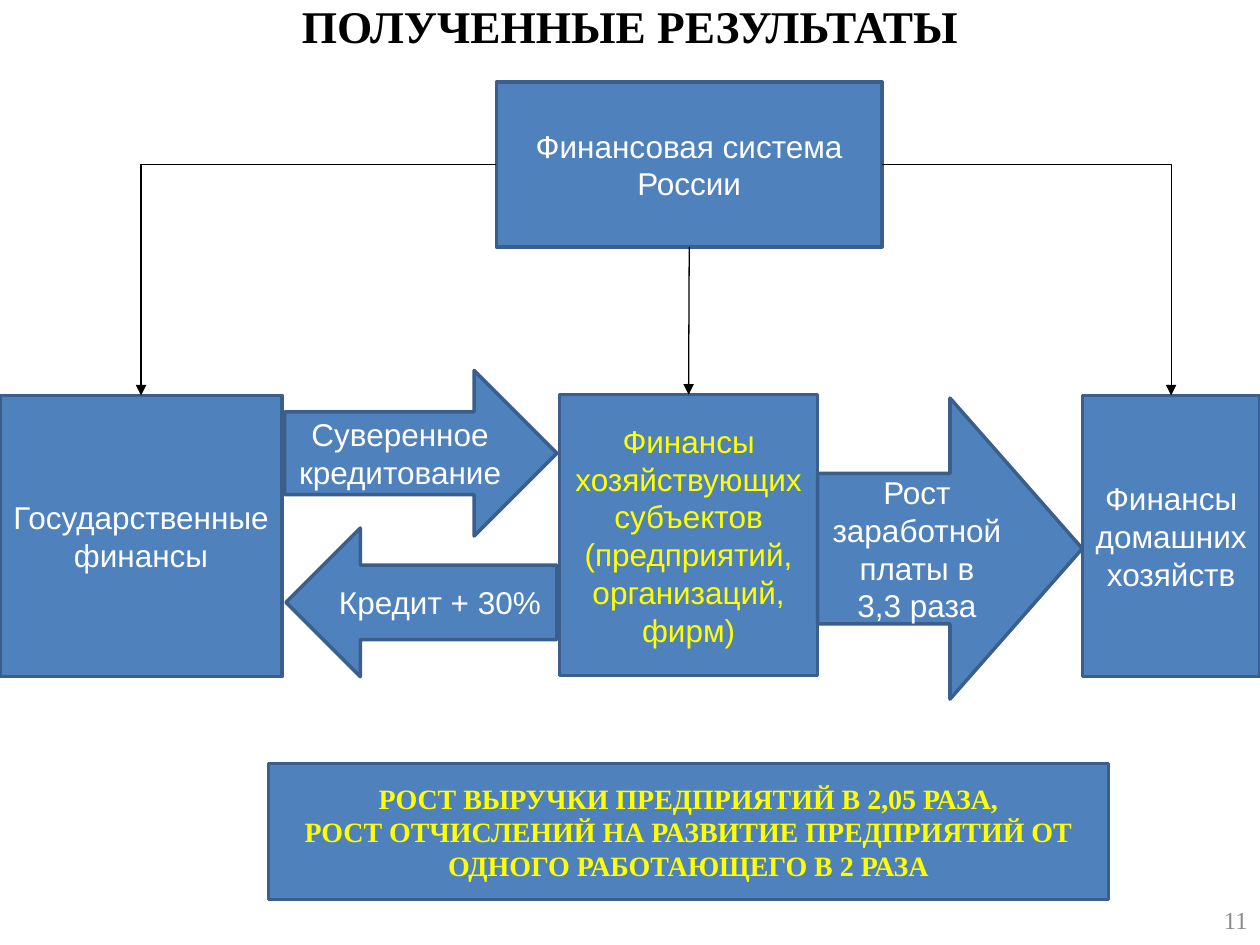
from pptx import Presentation
from pptx.dml.color import RGBColor
from pptx.enum import shapes, text
from pptx.oxml.ns import qn
from pptx.util import Pt
from lxml import etree

BLACK = RGBColor(0x00, 0x00, 0x00)
WHITE = RGBColor(0xFF, 0xFF, 0xFF)
YELLOW = RGBColor(0xFF, 0xFF, 0x00)
GRAY = RGBColor(0x8B, 0x8B, 0x8B)
BLUE = RGBColor(0x4F, 0x81, 0xBD)
DARK_BLUE = RGBColor(0x3A, 0x5F, 0x8C)

SERIF = "Times New Roman"
RECT = shapes.MSO_SHAPE.RECTANGLE
RIGHT = shapes.MSO_SHAPE.RIGHT_ARROW
LEFT = shapes.MSO_SHAPE.LEFT_ARROW
ELBOW = shapes.MSO_CONNECTOR.ELBOW
STRAIGHT = shapes.MSO_CONNECTOR.STRAIGHT
SITE_TOP, SITE_LEFT, SITE_BOTTOM, SITE_RIGHT = range(4)


def write(sp, *paragraphs, size=18, font="Arial", color=WHITE, bold=False,
          align=text.PP_ALIGN.CENTER, spacing=None):
    tf = sp.text_frame
    tf.word_wrap = True
    tf.vertical_anchor = text.MSO_ANCHOR.MIDDLE
    for i, content in enumerate(paragraphs):
        p = tf.add_paragraph() if i else tf.paragraphs[0]
        p.text = content
        p.alignment = align
        if spacing:
            p.line_spacing = spacing
        for r in p.runs:
            r.font.size = Pt(size)
            r.font.name = font
            r.font.bold = bold
            r.font.color.rgb = color


def add_label(s, box, content, **fmt):
    sp = s.shapes.add_textbox(*map(Pt, box))
    write(sp, content, font=SERIF, **fmt)


def add_block(s, kind, box, *paragraphs, **fmt):
    sp = s.shapes.add_shape(kind, *map(Pt, box))
    sp.shadow.inherit = False
    sp.fill.solid()
    sp.fill.fore_color.rgb = BLUE
    sp.line.color.rgb = DARK_BLUE
    sp.line.width = Pt(2)
    write(sp, *paragraphs, **fmt)
    return sp


def add_link(s, kind, source, site, target):
    cxn = s.shapes.add_connector(kind, 0, 0, 0, 0)
    cxn.begin_connect(source, site)
    cxn.end_connect(target, SITE_TOP)
    cxn.line.color.rgb = BLACK
    cxn.line.width = Pt(0.75)
    sp_pr = cxn._element.spPr
    if kind == ELBOW:
        sp_pr.find(qn("a:prstGeom")).set("prst", "bentConnector2")
    etree.SubElement(sp_pr.find(qn("a:ln")), qn("a:tailEnd"), type="triangle")
    etree.SubElement(sp_pr, qn("a:effectLst"))


def main():
    prs = Presentation()
    prs.slide_width, prs.slide_height = Pt(720), Pt(540)
    s = prs.slides.add_slide(prs.slide_layouts[6])

    add_label(s, (0, 0, 720, 34.6), "ПОЛУЧЕННЫЕ РЕЗУЛЬТАТЫ",
              size=25.9, color=BLACK, bold=True, spacing=0.8)
    add_label(s, (684.7, 511.2, 35.3, 28.8), "11",
              size=14, color=GRAY, align=text.PP_ALIGN.RIGHT)

    system = add_block(s, RECT, (283.7, 46.8, 220.3, 94.3), "Финансовая система России")
    state = add_block(s, RECT, (0, 226, 161.3, 160.6), "Государственные финансы")
    firms = add_block(s, RECT, (319.7, 225.5, 147.6, 160.6),
                      "Финансы хозяйствующих субъектов (предприятий, организаций, фирм)",
                      color=YELLOW)
    homes = add_block(s, RECT, (618.5, 226, 101.5, 160.6), "Финансы домашних хозяйств")

    add_link(s, ELBOW, system, SITE_LEFT, state)
    add_link(s, ELBOW, system, SITE_RIGHT, homes)
    add_link(s, STRAIGHT, system, SITE_BOTTOM, firms)

    add_block(s, RIGHT, (162.7, 211.7, 155.5, 94.6), "Суверенное кредитование")
    add_block(s, LEFT, (163.4, 301.7, 154.8, 85), "Кредит + 30%")
    add_block(s, RIGHT, (467.3, 227.5, 151.2, 172), "Рост заработной платы в\v3,3 раза")
    add_block(s, RECT, (153.4, 436.3, 480.2, 77.8),
              "РОСТ ВЫРУЧКИ ПРЕДПРИЯТИЙ В 2,05 РАЗА,",
              "РОСТ ОТЧИСЛЕНИЙ НА РАЗВИТИЕ ПРЕДПРИЯТИЙ ОТ ОДНОГО РАБОТАЮЩЕГО В 2 РАЗА",
              size=16, font=SERIF, color=YELLOW, bold=True)

    prs.save("out.pptx")


if __name__ == "__main__":
    main()
